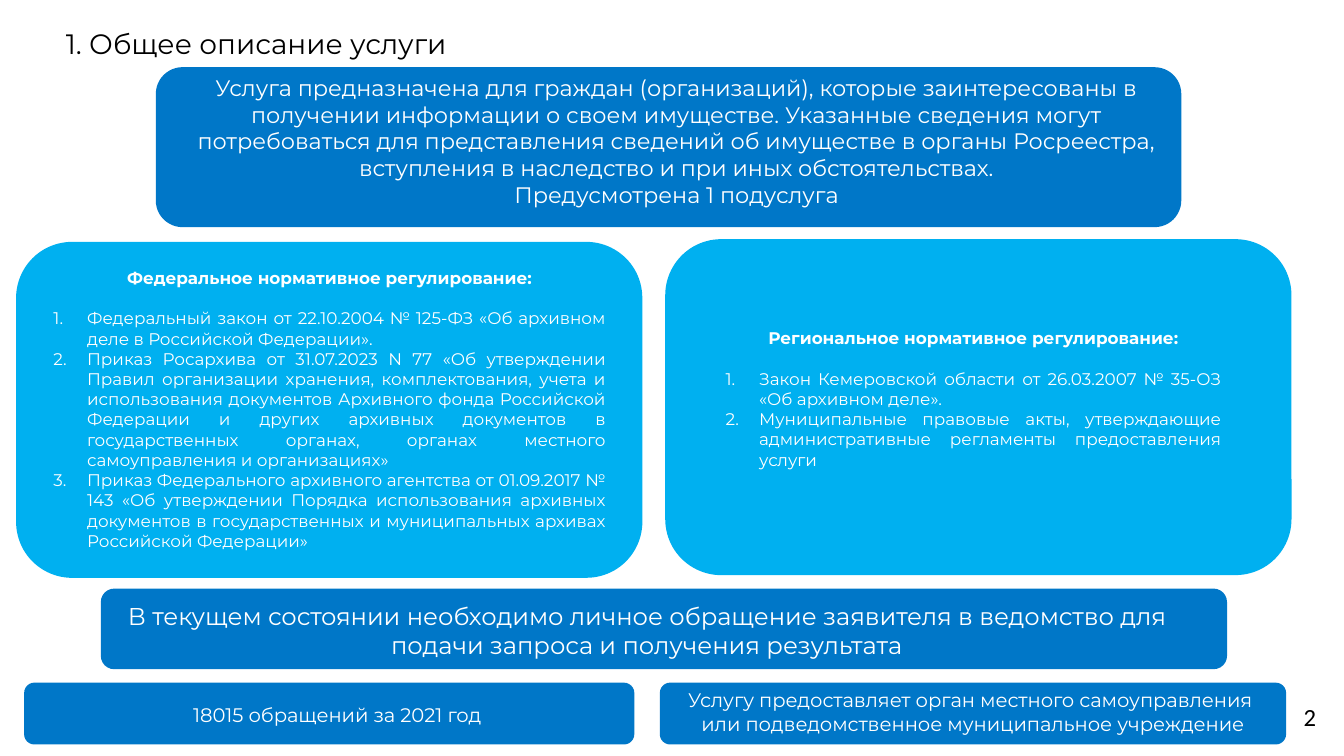
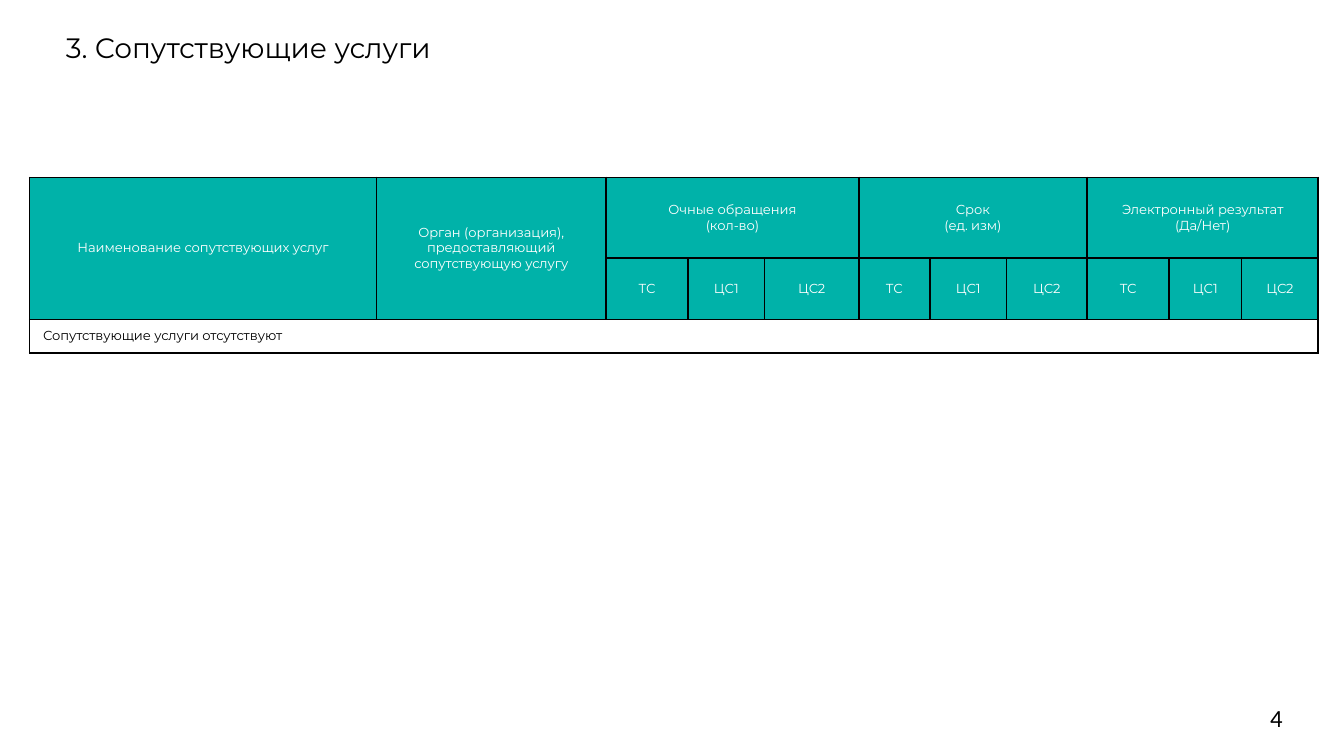
from lxml import etree
from pptx import Presentation
from pptx.dml.color import RGBColor
from pptx.enum.shapes import MSO_SHAPE
from pptx.enum.text import MSO_ANCHOR, MSO_AUTO_SIZE, PP_ALIGN
from pptx.oxml.ns import qn
from pptx.util import Pt

PX = 9144
SLIDE_WIDTH = 1000
TITLE_ONLY = 5
BLACK = RGBColor(0x00, 0x00, 0x00)
WHITE = RGBColor(0xFF, 0xFF, 0xFF)
BLUE = RGBColor(0x00, 0x77, 0xC8)
SKY = RGBColor(0x00, 0xB0, 0xF0)
TEAL = RGBColor(0x00, 0xB2, 0xA9)
FONT = "Montserrat"
NUMBER_FONT = "Calibri"
ROUNDED = MSO_SHAPE.ROUNDED_RECTANGLE
LEFT, CENTER, JUSTIFY = PP_ALIGN.LEFT, PP_ALIGN.CENTER, PP_ALIGN.JUSTIFY
TOP, MIDDLE = MSO_ANCHOR.TOP, MSO_ANCHOR.MIDDLE
FIXED, GROW = MSO_AUTO_SIZE.NONE, MSO_AUTO_SIZE.SHAPE_TO_FIT_TEXT

PURPOSE = (
    "Услуга предназначена для граждан (организаций), которые заинтересованы в "
    "получении информации о своем имуществе. Указанные сведения могут "
    "потребоваться для представления сведений об имуществе в органы Росреестра, "
    "вступления в наследство и при иных обстоятельствах.\n"
    "Предусмотрена 1 подуслуга"
)
CURRENT_STATE = (
    "В текущем состоянии необходимо личное обращение заявителя в ведомство "
    "для подачи запроса и получения результата"
)
PROVIDER = (
    "Услугу предоставляет орган местного самоуправления \n"
    "или подведомственное муниципальное учреждение"
)
FEDERAL_ACTS = (
    "Федеральный закон от 22.10.2004 № 125-ФЗ «Об архивном деле в Российской "
    "Федерации».\n"
    "Приказ Росархива от 31.07.2023 N 77 «Об утверждении Правил организации "
    "хранения, комплектования, учета и использования документов Архивного фонда "
    "Российской Федерации и других архивных документов в государственных органах, "
    "органах местного самоуправления и организациях»\n"
    "Приказ Федерального архивного агентства от 01.09.2017 № 143 «Об утверждении "
    "Порядка использования архивных документов в государственных и муниципальных "
    "архивах Российской Федерации» "
)
REGIONAL_ACTS = (
    "Закон Кемеровской области от 26.03.2007 № 35-ОЗ «Об архивном деле».\n"
    "Муниципальные правовые акты, утверждающие административные регламенты "
    "предоставления услуги"
)

COLUMN_WIDTHS = (258, 171, 61, 57, 70, 53, 57, 60, 61, 54, 57)
ROW_HEIGHTS = (60, 40, 25)
TALL_HEADERS = (
    "Наименование сопутствующих услуг",
    "Орган (организация), предоставляющий сопутствующую услугу",
)
GROUP_HEADERS = (
    "Очные обращения\n(кол-во)",
    "Срок\v(ед. изм)",
    "Электронный результат\n(Да/Нет)",
)
STATES = ("ТС", "ЦС1", "ЦС2")


def scaled(*lengths):
    """Turn px lengths into EMU."""
    return [length * PX for length in lengths]


def write(frame, text, size=9, color=WHITE, font=FONT, bold=False,
          align=CENTER, after=0, numbered=False):
    """Append a paragraph per line of text, with line breaks at vertical tabs."""
    for line in text.split("\n"):
        last = frame.paragraphs[-1]
        para = frame.add_paragraph() if last.runs else last
        para.alignment = align
        para.space_before, para.space_after = Pt(0), Pt(after)
        for part in line.split("\v"):
            if para.runs:
                para.add_line_break()
            span = para.add_run()
            span.text = part
            span.font.name = font
            span.font.size = Pt(size)
            span.font.bold = bold
            span.font.color.rgb = color
        if numbered:
            number_paragraph(para)


def number_paragraph(para):
    """Give a paragraph a hanging automatic number."""
    props = para._p.get_or_add_pPr()
    props.set("marL", str(25 * PX))
    props.set("indent", str(-25 * PX))
    etree.SubElement(props, qn("a:buFont"), typeface="+mj-lt")
    etree.SubElement(props, qn("a:buAutoNum"), type="arabicPeriod")


def set_frame(frame, anchor=TOP, fit=FIXED, inset=True):
    """Set wrapping, anchor, fitting and insets of a text frame."""
    frame.word_wrap = True
    frame.auto_size = fit
    frame.vertical_anchor = anchor
    if not inset:
        frame.margin_left = frame.margin_right = 0
        frame.margin_top = frame.margin_bottom = 0


def add_panel(page, bounds, color):
    """Draw a plain rounded panel."""
    panel = page.shapes.add_shape(ROUNDED, *scaled(*bounds))
    panel.shadow.inherit = False
    panel.fill.solid()
    panel.fill.fore_color.rgb = color
    panel.line.fill.background()


def add_box(page, bounds, **layout):
    """Add a text box and return its frame."""
    frame = page.shapes.add_textbox(*scaled(*bounds)).text_frame
    set_frame(frame, **layout)
    return frame


def add_acts(page, bounds, heading, acts):
    """Write a bold heading over a numbered list of legal acts."""
    frame = add_box(page, bounds, fit=GROW)
    write(frame, heading, bold=True, after=11)
    write(frame, acts, align=JUSTIFY, numbered=True)


def add_page(deck, title, title_bounds, number, number_bounds):
    """Add a slide with its title and page number."""
    page = deck.slides.add_slide(deck.slide_layouts[TITLE_ONLY])
    holder = page.shapes.title
    holder.left, holder.top, holder.width, holder.height = scaled(*title_bounds)
    set_frame(holder.text_frame, inset=False)
    write(holder.text_frame, title, size=15, color=BLACK, align=LEFT)
    frame = add_box(page, number_bounds, anchor=MIDDLE, inset=False)
    write(frame, number, size=13.2, color=BLACK, font=NUMBER_FONT, align=LEFT)
    return page


def set_borders(cell):
    """Draw a one-point black line on each side of a cell."""
    props = cell._tc.get_or_add_tcPr()
    for place, side in enumerate(("lnL", "lnR", "lnT", "lnB")):
        line = etree.Element(qn(f"a:{side}"), w=str(Pt(1)))
        fill = etree.SubElement(line, qn("a:solidFill"))
        etree.SubElement(fill, qn("a:srgbClr"), val=str(BLACK))
        props.insert(place, line)


def fill_cell(cell, text, **style):
    """Write text in the vertical middle of a cell."""
    cell.vertical_anchor = MIDDLE
    write(cell.text_frame, text, size=7, **style)


def add_services_table(page):
    """Build the table of related services with its two-level header."""
    bounds = scaled(22, 132, sum(COLUMN_WIDTHS), sum(ROW_HEIGHTS))
    table = page.shapes.add_table(
        len(ROW_HEIGHTS), len(COLUMN_WIDTHS), *bounds).table
    table.first_row = table.horz_banding = False
    for column, width in zip(table.columns, COLUMN_WIDTHS):
        column.width = width * PX
    for row, height in zip(table.rows, ROW_HEIGHTS):
        row.height = height * PX
    last = len(ROW_HEIGHTS) - 1
    for index, row in enumerate(table.rows):
        for cell in row.cells:
            if index < last:
                cell.fill.solid()
                cell.fill.fore_color.rgb = TEAL
            else:
                cell.fill.background()
            set_borders(cell)

    for column, header in enumerate(TALL_HEADERS):
        table.cell(0, column).merge(table.cell(1, column))
        fill_cell(table.cell(0, column), header)
    for group, header in enumerate(GROUP_HEADERS):
        start = len(TALL_HEADERS) + group * len(STATES)
        table.cell(0, start).merge(table.cell(0, start + len(STATES) - 1))
        fill_cell(table.cell(0, start), header)
        for offset, state in enumerate(STATES):
            fill_cell(table.cell(1, start + offset), state)
    table.cell(last, 0).merge(table.cell(last, len(COLUMN_WIDTHS) - 1))
    fill_cell(table.cell(last, 0), "Сопутствующие услуги отсутствуют",
              color=BLACK, align=LEFT)


def build_description(deck):
    """Build the slide with the general description of the service."""
    page = add_page(deck, "1. Общее описание услуги", (49, 20, 700, 23),
                    "2", (970, 518, 26, 30))
    for bounds, color in (
        ((491, 508, 466, 46), BLUE),
        ((18, 508, 454, 46), BLUE),
        ((75, 438, 838, 60), BLUE),
        ((495, 178, 466, 250), SKY),
        ((12, 180, 466, 250), SKY),
        ((116, 50, 763, 119), BLUE),
    ):
        add_panel(page, bounds, color)
    write(add_box(page, (69, 447, 824, 51), inset=False), CURRENT_STATE, size=13)
    for bounds, text, size in (
        ((122, 50, 763, 111), PURPOSE, 12),
        ((5, 518, 492, 28), "18015 обращений за 2021 год", 10.5),
        ((480, 507, 488, 45), PROVIDER, 10.5),
    ):
        write(add_box(page, bounds, fit=GROW), text, size=size)
    add_acts(page, (30, 194, 430, 222),
             "Федеральное нормативное регулирование:", FEDERAL_ACTS)
    add_acts(page, (530, 239, 388, 116),
             "Региональное нормативное регулирование:", REGIONAL_ACTS)


def build_related_services(deck):
    """Build the slide with the related services."""
    page = add_page(deck, "3. Сопутствующие услуги", (49, 23, 700, 29),
                    "4", (945, 519, 47, 30))
    add_services_table(page)


def main():
    """Build and save the deck."""
    deck = Presentation()
    deck.slide_width = SLIDE_WIDTH * PX
    deck.slide_height = deck.slide_width * 9 // 16
    build_description(deck)
    build_related_services(deck)
    deck.save("out.pptx")


if __name__ == "__main__":
    main()
